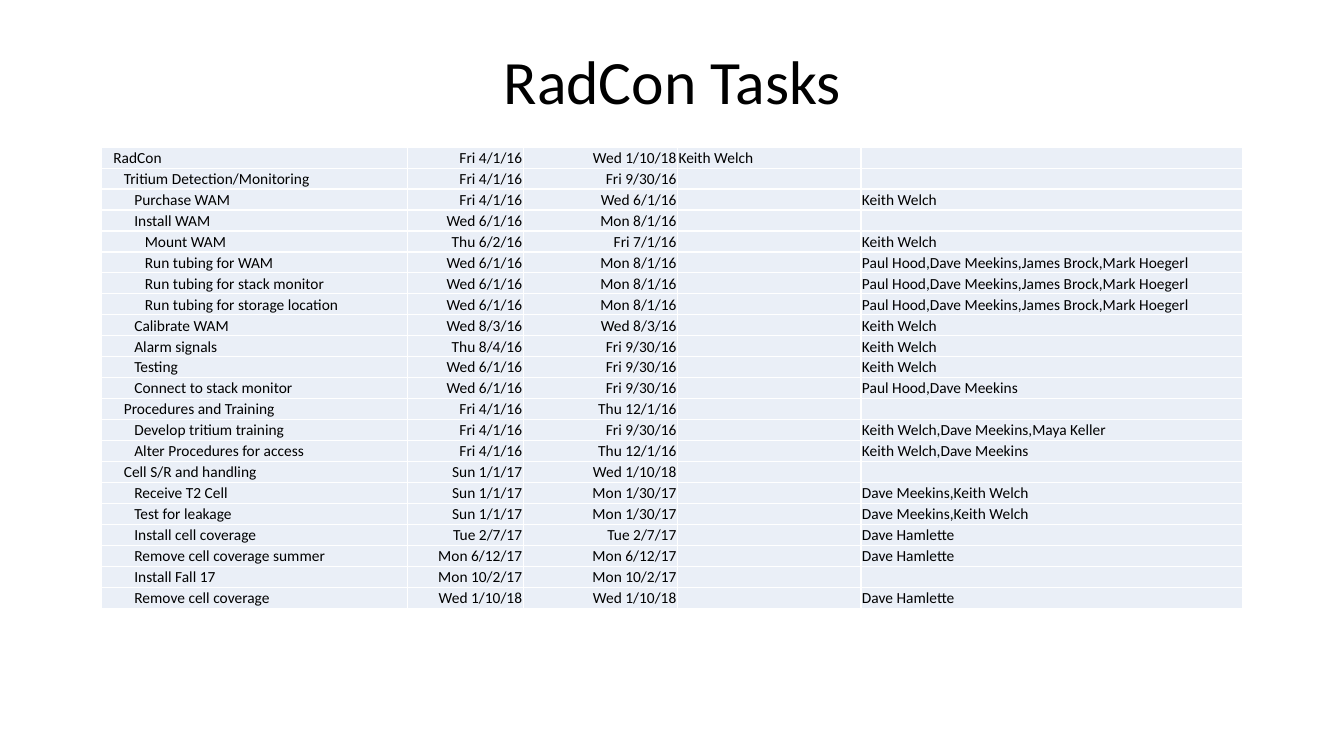
"""Build the RadCon task schedule slide."""
from lxml import etree
from pptx import Presentation
from pptx.dml.color import RGBColor
from pptx.enum.text import MSO_ANCHOR, PP_ALIGN
from pptx.oxml.ns import qn
from pptx.util import Inches, Pt

TITLE = "RadCon Tasks"
CREW = "Paul Hood,Dave Meekins,James Brock,Mark Hoegerl"
# fields: outline level, task, start, finish, lead, assigned people
TASKS = [
    (1, "RadCon", "Fri 4/1/16", "Wed 1/10/18", "Keith Welch", ""),
    (2, "Tritium Detection/Monitoring", "Fri 4/1/16", "Fri 9/30/16", "", ""),
    (3, "Purchase WAM", "Fri 4/1/16", "Wed 6/1/16", "", "Keith Welch"),
    (3, "Install WAM", "Wed 6/1/16", "Mon 8/1/16", "", ""),
    (4, "Mount WAM", "Thu 6/2/16", "Fri 7/1/16", "", "Keith Welch"),
    (4, "Run tubing for WAM", "Wed 6/1/16", "Mon 8/1/16", "", CREW),
    (4, "Run tubing for stack monitor", "Wed 6/1/16", "Mon 8/1/16", "", CREW),
    (4, "Run tubing for storage location", "Wed 6/1/16", "Mon 8/1/16", "", CREW),
    (3, "Calibrate WAM", "Wed 8/3/16", "Wed 8/3/16", "", "Keith Welch"),
    (3, "Alarm signals", "Thu 8/4/16", "Fri 9/30/16", "", "Keith Welch"),
    (3, "Testing", "Wed 6/1/16", "Fri 9/30/16", "", "Keith Welch"),
    (3, "Connect to stack monitor", "Wed 6/1/16", "Fri 9/30/16", "", "Paul Hood,Dave Meekins"),
    (2, "Procedures and Training", "Fri 4/1/16", "Thu 12/1/16", "", ""),
    (3, "Develop tritium training", "Fri 4/1/16", "Fri 9/30/16", "", "Keith Welch,Dave Meekins,Maya Keller"),
    (3, "Alter Procedures for access", "Fri 4/1/16", "Thu 12/1/16", "", "Keith Welch,Dave Meekins"),
    (2, "Cell S/R and handling", "Sun 1/1/17", "Wed 1/10/18", "", ""),
    (3, "Receive T2 Cell", "Sun 1/1/17", "Mon 1/30/17", "", "Dave Meekins,Keith Welch"),
    (3, "Test for leakage", "Sun 1/1/17", "Mon 1/30/17", "", "Dave Meekins,Keith Welch"),
    (3, "Install cell coverage", "Tue 2/7/17", "Tue 2/7/17", "", "Dave Hamlette"),
    (3, "Remove cell coverage summer", "Mon 6/12/17", "Mon 6/12/17", "", "Dave Hamlette"),
    (3, "Install Fall 17", "Mon 10/2/17", "Mon 10/2/17", "", ""),
    (3, "Remove cell coverage", "Wed 1/10/18", "Wed 1/10/18", "", "Dave Hamlette"),
]

LEFT, RIGHT, MIDDLE = PP_ALIGN.LEFT, PP_ALIGN.RIGHT, MSO_ANCHOR.MIDDLE
COLUMNS = [(3.03, LEFT), (1.15, RIGHT), (1.53, RIGHT), (1.82, LEFT), (3.78, LEFT)]
TABLE_LEFT, TABLE_TOP, TABLE_HEIGHT = Inches(1.01), Inches(1.46), Inches(4.58)
CELL_MARGIN, LEVEL_INDENT = Inches(0.01), Pt(7.5)
FONT, TITLE_SIZE, CELL_SIZE = "Calibri", Pt(44), Pt(11)
BLACK = RGBColor(0x00, 0x00, 0x00)
WHITE = RGBColor(0xFF, 0xFF, 0xFF)
PALE_BLUE = RGBColor(0xEA, 0xEF, 0xF7)


def style_font(paragraph, size):
    paragraph.font.name = FONT
    paragraph.font.size = size
    paragraph.font.color.rgb = BLACK


def add_borders(cell):
    properties = cell._tc.get_or_add_tcPr()
    for side in ("a:lnL", "a:lnR", "a:lnT", "a:lnB"):
        line = etree.SubElement(properties, qn(side), w=str(Pt(1)))
        fill = etree.SubElement(line, qn("a:solidFill"))
        etree.SubElement(fill, qn("a:srgbClr"), val=str(WHITE))


def fill_cell(cell, text, alignment, indent):
    add_borders(cell)
    cell.fill.solid()
    cell.fill.fore_color.rgb = PALE_BLUE
    cell.vertical_anchor = MIDDLE
    cell.margin_left = CELL_MARGIN + indent
    cell.margin_right = cell.margin_top = CELL_MARGIN
    cell.margin_bottom = 0
    cell.text = text
    paragraph = cell.text_frame.paragraphs[0]
    paragraph.alignment = alignment
    style_font(paragraph, CELL_SIZE)
    if not text:
        end = etree.SubElement(paragraph._p, qn("a:endParaRPr"))
        end.set("sz", str(int(CELL_SIZE.pt * 100)))


def add_title(slide):
    title = slide.shapes.title
    title.left, title.top = Inches(0.92), Inches(0.4)
    title.width, title.height = Inches(11.5), Inches(0.88)
    title.text_frame.text = TITLE
    title.text_frame.vertical_anchor = MIDDLE
    paragraph = title.text_frame.paragraphs[0]
    paragraph.alignment = PP_ALIGN.CENTER
    paragraph.line_spacing = 0.9
    style_font(paragraph, TITLE_SIZE)


def add_task_table(slide):
    table_width = Inches(sum(width for width, _ in COLUMNS))
    table = slide.shapes.add_table(
        len(TASKS), len(COLUMNS), TABLE_LEFT, TABLE_TOP, table_width, TABLE_HEIGHT
    ).table
    table.first_row = table.horz_banding = False
    for column, (width, _) in zip(table.columns, COLUMNS):
        column.width = Inches(width)
    for row, (level, *texts) in zip(table.rows, TASKS):
        for index, (cell, text) in enumerate(zip(row.cells, texts)):
            indent = level * LEVEL_INDENT if index == 0 else 0
            fill_cell(cell, text, COLUMNS[index][1], indent)


def main():
    presentation = Presentation()
    presentation.slide_width, presentation.slide_height = Inches(13.33), Inches(7.5)
    slide = presentation.slides.add_slide(presentation.slide_layouts.get_by_name("Title Only"))
    add_title(slide)
    add_task_table(slide)
    presentation.save("out.pptx")


if __name__ == "__main__":
    main()
